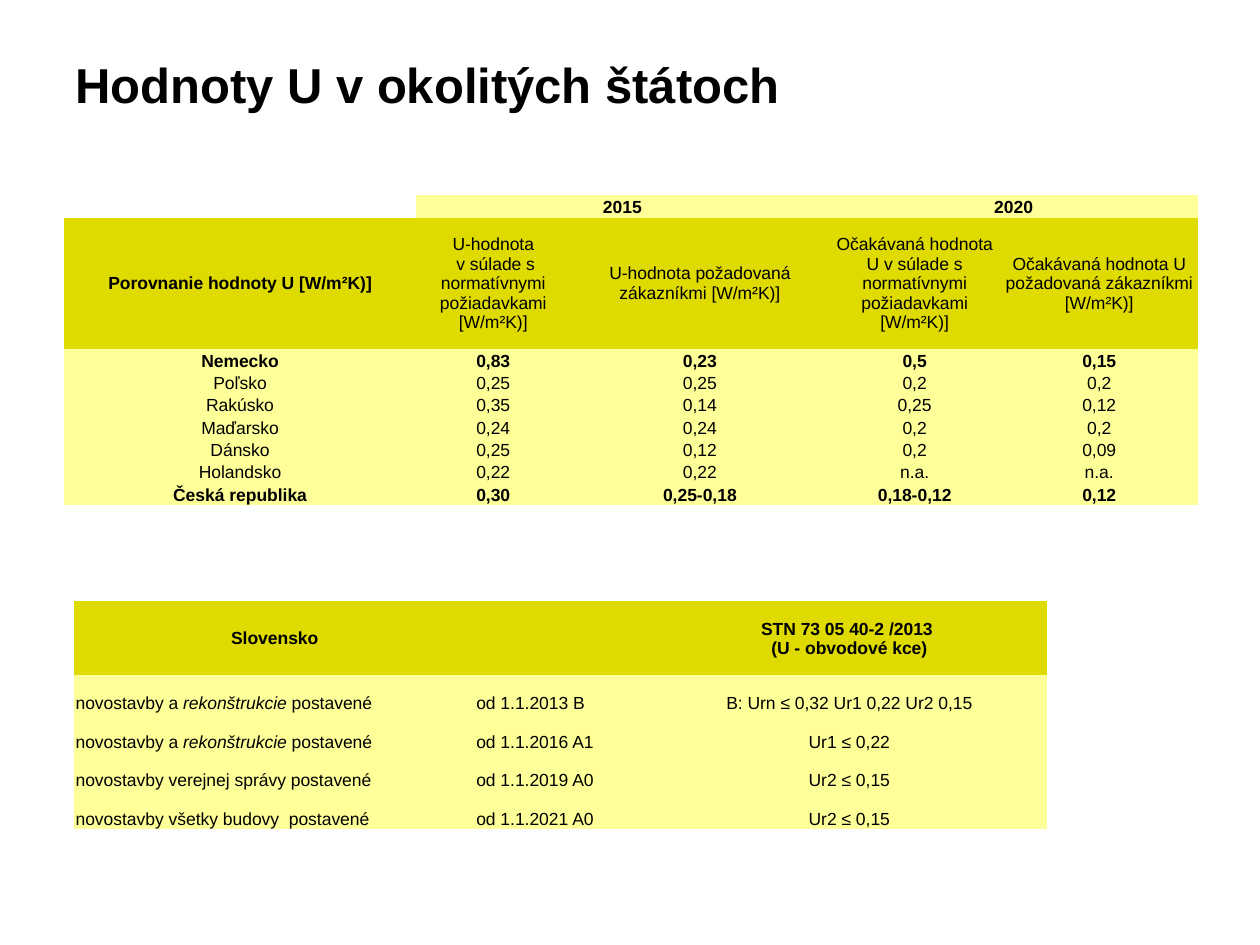
from dataclasses import dataclass

from lxml import etree
from pptx import Presentation
from pptx.dml.color import RGBColor
from pptx.enum.text import MSO_ANCHOR, PP_ALIGN
from pptx.oxml.ns import qn
from pptx.util import Inches, Pt

BLACK = RGBColor(0x00, 0x00, 0x00)
OLIVE = RGBColor(0xDF, 0xDA, 0x00)
PALE = RGBColor(0xFF, 0xFF, 0x99)
FONT = "Arial"
CELL_SIZE = 10
LEFT, CENTER = PP_ALIGN.LEFT, PP_ALIGN.CENTER
MIDDLE, BOTTOM = MSO_ANCHOR.MIDDLE, MSO_ANCHOR.BOTTOM
NO_GRID_STYLE = "{2D5ABB26-0587-4C30-8999-92F81FD0307C}"


@dataclass(frozen=True)
class Row:
    """Cell texts: newline starts a paragraph, | breaks a line, * toggles italics."""
    texts: tuple[str, ...]
    height: float
    fill: RGBColor = PALE
    anchor: MSO_ANCHOR = BOTTOM
    bold: tuple[int, ...] = ()
    aligns: tuple[PP_ALIGN, ...] = (CENTER,) * 5


@dataclass(frozen=True)
class Grid:
    left: float
    top: float
    cols: tuple[float, ...]
    rows: tuple[Row, ...]


ALL = tuple(range(5))
LINE = 0.172
COUNTRIES = (
    ("Nemecko", "0,83", "0,23", "0,5", "0,15"),
    ("Poľsko", "0,25", "0,25", "0,2", "0,2"),
    ("Rakúsko", "0,35", "0,14", "0,25", "0,12"),
    ("Maďarsko", "0,24", "0,24", "0,2", "0,2"),
    ("Dánsko", "0,25", "0,12", "0,2", "0,09"),
    ("Holandsko", "0,22", "0,22", "n.a.", "n.a."),
    ("Česká republika", "0,30", "0,25-0,18", "0,18-0,12", "0,12"),
)
HIGHLIGHTED = ("Nemecko", "Česká republika")
COMPARISON = Grid(0.51, 1.55, (2.79, 1.23, 2.05, 1.36, 1.57), (
    Row(("", "2015", "", "2020", ""), LINE, anchor=MIDDLE, bold=ALL),
    Row(("Porovnanie hodnoty U [W/m²K)]",
         "U-hodnota\n v súlade s normatívnymi požiadavkami [W/m²K)]",
         "U-hodnota požadovaná zákazníkmi [W/m²K)]",
         "Očakávaná hodnota U v súlade s normatívnymi požiadavkami [W/m²K)]",
         "Očakávaná hodnota U požadovaná zákazníkmi [W/m²K)]"),
        1.04, OLIVE, MIDDLE, bold=(0,)),
    *(Row(c, LINE, bold=ALL if c[0] in HIGHLIGHTED else ()) for c in COUNTRIES),
))

REQUIREMENTS = (
    ("novostavby a *rekonštrukcie *postavené", "od 1.1.2013 B",
     "B: Urn ≤ 0,32 Ur1 0,22 Ur2 0,15"),
    ("novostavby a *rekonštrukcie *postavené", "od 1.1.2016 A1", "Ur1 ≤ 0,22"),
    ("novostavby verejnej správy postavené", "od 1.1.2019 A0", "Ur2 ≤ 0,15"),
    ("novostavby všetky budovy  postavené", "od 1.1.2021 A0", "Ur2 ≤ 0,15"),
)
SLOVAKIA = Grid(0.59, 4.77, (3.18, 1.4, 3.14), (
    Row(("Slovensko", "", "STN 73 05 40-2 /2013 |(U - obvodové kce)"),
        0.59, OLIVE, MIDDLE, bold=ALL),
    *(Row(r, 0.305, aligns=(LEFT, LEFT, CENTER)) for r in REQUIREMENTS),
))


def add_run(p, text: str, size: float, bold: bool, italic: bool = False) -> None:
    r = p.add_run()
    r.text = text
    r.font.name, r.font.size = FONT, Pt(size)
    r.font.bold, r.font.italic = bold, italic
    r.font.color.rgb = BLACK


def fill_cell(cell, text: str, row: Row, align: PP_ALIGN, bold: bool) -> None:
    cell.margin_left = cell.margin_right = cell.margin_top = Inches(0.01)
    cell.margin_bottom = 0
    cell.vertical_anchor = row.anchor
    cell.fill.solid()
    cell.fill.fore_color.rgb = row.fill
    tf = cell.text_frame
    for i, para in enumerate(text.split("\n")):
        p = tf.paragraphs[0] if i == 0 else tf.add_paragraph()
        p.alignment = align
        for j, line in enumerate(para.split("|")):
            if j:
                p.add_line_break()
            for k, part in enumerate(line.split("*")):
                if part:
                    add_run(p, part, CELL_SIZE, bold, italic=k % 2 == 1)
        # Keeps empty cells from stretching their row
        etree.SubElement(p._p, qn("a:endParaRPr"), sz=str(CELL_SIZE * 100))


def draw_table(s, grid: Grid):
    table = s.shapes.add_table(
        len(grid.rows), len(grid.cols), Inches(grid.left), Inches(grid.top),
        Inches(sum(grid.cols)), Inches(sum(row.height for row in grid.rows))).table
    table.first_row = table.horz_banding = False
    table._tbl.tblPr.find(qn("a:tableStyleId")).text = NO_GRID_STYLE
    for c, width in enumerate(grid.cols):
        table.columns[c].width = Inches(width)
    for n, row in enumerate(grid.rows):
        table.rows[n].height = Inches(row.height)
        for c, text in enumerate(row.texts):
            fill_cell(table.cell(n, c), text, row, row.aligns[c], c in row.bold)
    return table


def draw_title(s, text: str) -> None:
    tf = s.shapes.add_textbox(Inches(0.5), Inches(0.25), Inches(6.47), Inches(0.83)).text_frame
    tf.word_wrap = True
    tf.vertical_anchor = MIDDLE
    add_run(tf.paragraphs[0], text, 28, bold=True)


def main() -> None:
    prs = Presentation()
    prs.slide_width, prs.slide_height = Inches(10), Inches(7.5)
    s = prs.slides.add_slide(prs.slide_layouts[6])
    draw_title(s, "Hodnoty U v okolitých štátoch")
    comparison = draw_table(s, COMPARISON)
    comparison.cell(0, 0).fill.background()
    for year_col in (1, 3):
        comparison.cell(0, year_col).merge(comparison.cell(0, year_col + 1))
    draw_table(s, SLOVAKIA)
    prs.save("out.pptx")


if __name__ == "__main__":
    main()
